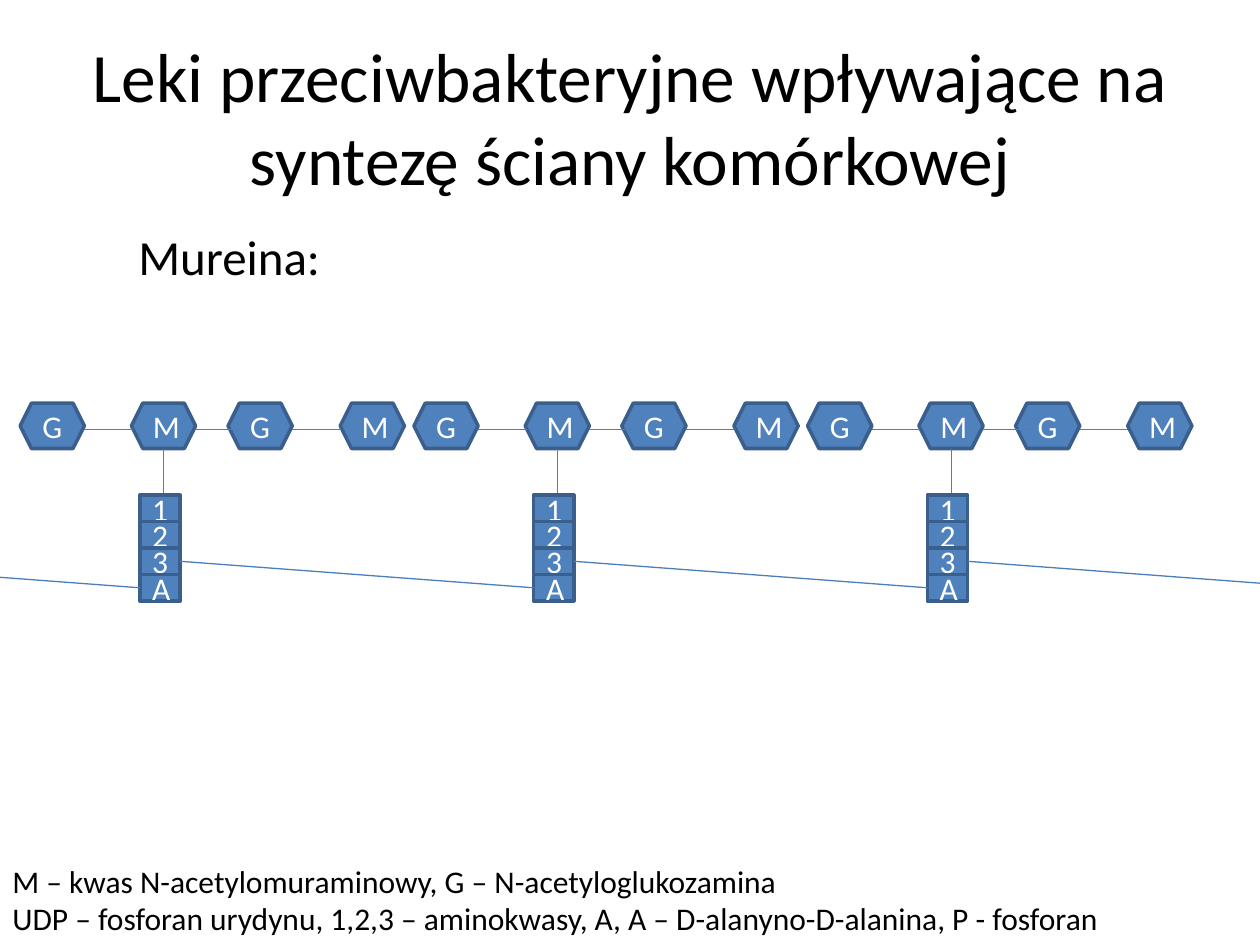
from dataclasses import dataclass

import lxml.etree
import pptx
import pptx.dml.color
import pptx.enum.shapes
import pptx.enum.text
import pptx.oxml.ns
import pptx.util

FORM = pptx.enum.shapes.MSO_SHAPE
LINE = pptx.enum.shapes.MSO_CONNECTOR.STRAIGHT
ALIGN = pptx.enum.text.PP_ALIGN
ANCHOR = pptx.enum.text.MSO_ANCHOR


@dataclass(frozen=True)
class Theme:
    font: str = "Calibri"
    dark: str = "000000"
    light: str = "FFFFFF"
    fill: str = "4F81BD"
    edge: str = "3A5F8C"
    link: str = "4B7EBC"
    title: float = 39.6
    head: float = 28
    text: float = 18
    border: float = 2
    thin: float = 0.75


@dataclass(frozen=True)
class Box:
    """An area on a grid of 100 columns and 100 rows."""
    col: float
    row: float
    wide: float
    high: float


THEME = Theme()
WIDTH, HEIGHT = pptx.util.Inches(10), pptx.util.Inches(7.5)

# Murein chain: sugars on one row, each unit with a peptide column below
PERIOD = 31.25
UNITS = 3
START = 1.6
SUGARS = (("G", 0), ("M", 8.83), ("G", 16.5), ("M", 25.4))
SUGAR = Box(0, 42.67, 5.1, 4.8)
LINK = 3.85
LEVEL = 45.47
PEPTIDE = "123A"
ACID = Box(9.5, 52.4, 3.2, 2.8)
STEM = 11.4


def across(col: float) -> int:
    return round(WIDTH * col / 100)


def down(row: float) -> int:
    return round(HEIGHT * row / 100)


def place(box: Box) -> tuple:
    return across(box.col), down(box.row), across(box.wide), down(box.high)


def paint(code: str):
    return pptx.dml.color.RGBColor.from_string(code)


def write(shape, text: str, *, size=THEME.text, color=THEME.dark,
          align=ALIGN.LEFT, anchor=ANCHOR.TOP, before=0, margin=0, indent=0):
    frame = shape.text_frame
    frame.word_wrap = True
    frame.vertical_anchor = anchor
    frame.text = text
    for para in frame.paragraphs:
        para.alignment = align
        para.space_before = pptx.util.Pt(before)
        props = para._p.get_or_add_pPr()
        props.set("marL", str(pptx.util.Inches(margin)))
        props.set("indent", str(pptx.util.Inches(indent)))
        for run in para.runs:
            run.font.name = THEME.font
            run.font.size = pptx.util.Pt(size)
            run.font.color.rgb = paint(color)


def label(slide, box: Box, text: str, **style):
    write(slide.shapes.add_textbox(*place(box)), text, **style)


def block(group, form, box: Box, text: str):
    shape = group.shapes.add_shape(form, *place(box))
    shape.shadow.inherit = False
    shape.fill.solid()
    shape.fill.fore_color.rgb = paint(THEME.fill)
    shape.line.color.rgb = paint(THEME.edge)
    shape.line.width = pptx.util.Pt(THEME.border)
    write(shape, text, color=THEME.light, align=ALIGN.CENTER,
          anchor=ANCHOR.MIDDLE)
    return shape


def join(host, start: tuple, end: tuple):
    line = host.shapes.add_connector(LINE, across(start[0]), down(start[1]),
                                     across(end[0]), down(end[1]))
    line.line.color.rgb = paint(THEME.link)
    line.line.width = pptx.util.Pt(THEME.thin)
    lxml.etree.SubElement(line._element.spPr,
                          pptx.oxml.ns.qn("a:effectLst"))
    return line


def unit(slide, left: float) -> list:
    """Draw one repeat of the chain and return its peptide blocks."""
    group = slide.shapes.add_group_shape()
    for name, step in SUGARS:
        block(group, FORM.HEXAGON,
              Box(left + step, SUGAR.row, SUGAR.wide, SUGAR.high), name)
    for _, step in SUGARS[:-1]:
        side = left + step + SUGAR.wide
        join(group, (side, LEVEL), (side + LINK, LEVEL))
    join(group, (left + STEM, SUGAR.row + SUGAR.high),
         (left + STEM, ACID.row))
    return [block(group, FORM.RECTANGLE,
                  Box(left + ACID.col, ACID.row + rank * ACID.high,
                      ACID.wide, ACID.high), name)
            for rank, name in enumerate(PEPTIDE)]


def bridges(slide, stacks: list):
    """Link acid 3 of each unit to acid A of the next, past both ends."""
    high = ACID.row + 2.5 * ACID.high
    low = high + ACID.high
    for rank in range(-1, UNITS):
        left = START + rank * PERIOD + ACID.col
        line = join(slide, (left + ACID.wide, high), (left + PERIOD, low))
        if rank >= 0:
            line.begin_connect(stacks[rank][2], 3)
        if rank + 1 < UNITS:
            line.end_connect(stacks[rank + 1][3], 1)


def main():
    deck = pptx.Presentation()
    deck.slide_width, deck.slide_height = WIDTH, HEIGHT
    slide = deck.slides.add_slide(deck.slide_layouts[6])

    # Heading and legend
    label(slide, Box(5, 4, 90, 16.67),
          "Leki przeciwbakteryjne wpływające na syntezę ściany komórkowej",
          size=THEME.title, align=ALIGN.CENTER, anchor=ANCHOR.MIDDLE)
    label(slide, Box(5, 23.33, 90, 20.4), "Mureina:", size=THEME.head,
          before=THEME.head / 5, margin=0.81, indent=-0.31)
    label(slide, Box(0, 90.53, 98.4, 9.47),
          "M – kwas N-acetylomuraminowy, G – N-acetyloglukozamina\n"
          "UDP – fosforan urydynu, 1,2,3 – aminokwasy, "
          "A, A – D-alanyno-D-alanina, P - fosforan")

    # Chain and cross-links
    stacks = [unit(slide, START + rank * PERIOD) for rank in range(UNITS)]
    bridges(slide, stacks)
    deck.save("out.pptx")


if __name__ == "__main__":
    main()
